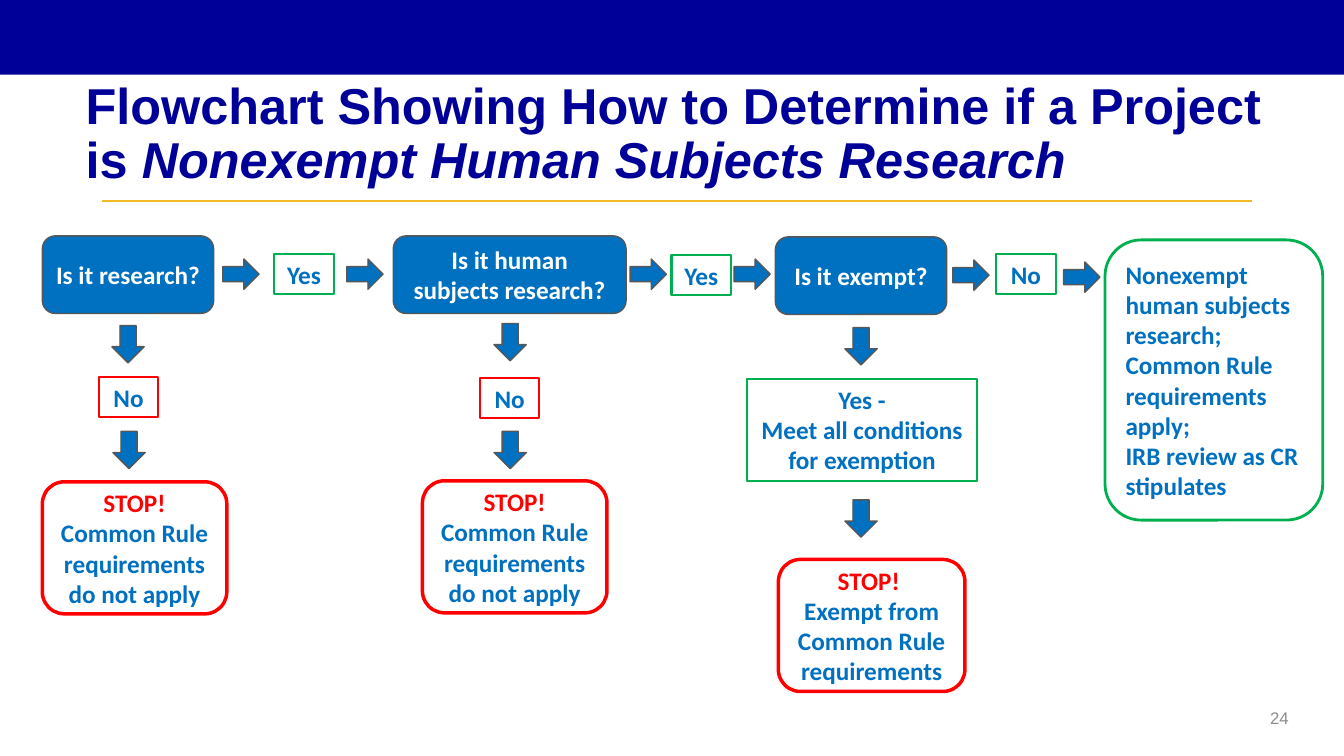
from pptx import Presentation
from pptx.dml.color import RGBColor
from pptx.enum.shapes import MSO_CONNECTOR, MSO_SHAPE as Kind
from pptx.enum.text import MSO_ANCHOR as Anchor, MSO_AUTO_SIZE as Fit, PP_ALIGN as Align
from pptx.oxml.ns import qn
from pptx.util import Inches, Pt
from lxml import etree

NAVY, BLUE, GREY, WHITE = "000099", "0070C0", "575757", "FFFFFF"
RED, GREEN, GOLD = "FF0000", "00B050", "F3B927"
CELL = Inches(0.1)  # the page is a grid of 133.3 columns by 75 rows


def color(value):
    return RGBColor.from_string(value)


def add_box(kind, place, fill, edge, width, paragraphs=(), align=Align.CENTER, anchor=Anchor.MIDDLE):
    """Draw one shape; each paragraph is a list of (text, colour) spans."""
    box = page.shapes.add_shape(kind, *(round(CELL * cells) for cells in place))
    box.shadow.inherit = False
    if fill:
        box.fill.solid()
        box.fill.fore_color.rgb = color(fill)
    else:
        box.fill.background()
    if edge:
        box.line.color.rgb = color(edge)
        box.line.width = Pt(width)
    else:
        box.line.fill.background()
    frame = box.text_frame
    frame.word_wrap = True
    frame.vertical_anchor = anchor
    for index, spans in enumerate(paragraphs):
        para = frame.add_paragraph() if index else frame.paragraphs[0]
        para.alignment = align
        for text, tint in spans:
            span = para.add_run()
            span.text = text
            for name, value in {"name": "Calibri", "size": Pt(18), "bold": True}.items():
                setattr(span.font, name, value)
            span.font.color.rgb = color(tint)
    return box


deck = Presentation()
deck.slide_width, deck.slide_height = Inches(13.33), Inches(7.5)
page = deck.slides.add_slide(deck.slide_layouts[5])

# Top band and gold rule
add_box(Kind.RECTANGLE, (0, 0, 133.3, 7.4), NAVY, None, 0)
rule = page.shapes.add_connector(
    MSO_CONNECTOR.STRAIGHT, *(round(CELL * cells) for cells in (10.1, 19.9, 124.2, 19.9)))
rule.line.color.rgb = color(GOLD)
rule.line.width = Pt(1.5)
etree.SubElement(rule._element.spPr, qn("a:effectLst"))

# Title
title = page.shapes.title
for name, cells in {"left": 7.5, "top": 9.9, "width": 123.7, "height": 9.4}.items():
    setattr(title, name, round(CELL * cells))
frame = title.text_frame
for name, value in {"word_wrap": True, "auto_size": Fit.NONE, "vertical_anchor": Anchor.BOTTOM}.items():
    setattr(frame, name, value)
para = frame.paragraphs[0]
para.alignment = Align.LEFT
para.line_spacing = 0.9
for text, italic in (("Flowchart Showing How to Determine if a Project is ", False),
                     ("Nonexempt Human Subjects Research", True)):
    span = para.add_run()
    span.text = text
    for name, value in {"name": "Arial", "size": Pt(36), "bold": True, "italic": italic}.items():
        setattr(span.font, name, value)
    span.font.color.rgb = color(NAVY)

# Page number
number = page.shapes.add_textbox(*(round(CELL * cells) for cells in (98.8, 69.7, 30, 4)))
number.text_frame.word_wrap = True
para = number.text_frame.paragraphs[0]
para.alignment = Align.RIGHT
span = para.add_run()
span.text = "24"
span.font.name, span.font.size = "Arial", Pt(12)
span.font.color.rgb = color("8C8C8C")

# Questions
for left, top, width, question in ((4.2, 23.4, 17, "Is it research?"),
                                   (39, 23.4, 23.1, "Is it human subjects research?"),
                                   (76.9, 23.5, 17, "Is it exempt?")):
    add_box(Kind.ROUNDED_RECTANGLE, (left, top, width, 7.7), BLUE, GREY, 1, [[(question, WHITE)]])

# Final outcome
outcome = ("Nonexempt human subjects research;", "Common Rule requirements apply;",
           "IRB review as CR stipulates")
add_box(Kind.ROUNDED_RECTANGLE, (109.6, 23.8, 21.6, 27.8), None, GREEN, 2,
        [[(line, BLUE)] for line in outcome], Align.LEFT)

# Answers
for left, top, answer, edge in ((9.8, 37.4, "No", RED), (47.6, 37.5, "No", RED),
                                (98.8, 25.2, "No", GREEN), (27.2, 25.2, "Yes", GREEN),
                                (66.6, 25.3, "Yes", GREEN)):
    add_box(Kind.RECTANGLE, (left, top, 5.9, 4), WHITE, edge, 1.5, [[(answer, BLUE)]], anchor=Anchor.TOP)
add_box(Kind.RECTANGLE, (74.1, 37.6, 22.8, 10.1), WHITE, GREEN, 1.5,
        [[("Yes -", BLUE)], [("Meet all conditions for exemption", BLUE)]], anchor=Anchor.TOP)

# Stops
not_apply = [[("STOP!", RED), (" Common Rule requirements do not apply", BLUE)]]
exempt = [[("STOP! ", RED)], [("Exempt from Common Rule requirements", BLUE)]]
for left, top, width, message in ((4.2, 47.8, 18.3, not_apply), (41.9, 47.7, 18.3, not_apply),
                                  (77.2, 55.5, 18.5, exempt)):
    add_box(Kind.ROUNDED_RECTANGLE, (left, top, width, 13.1), WHITE, RED, 2.5, message)

# Block arrows
for left, top in ((11.1, 32.3), (11.2, 42.8), (49, 32.1), (49, 42.8), (83.8, 32.5), (83.8, 49.6)):
    add_box(Kind.DOWN_ARROW, (left, top, 3.2, 3.7), BLUE, GREY, 1)
for left, top in ((22.1, 25.7), (34.4, 25.7), (62.5, 25.7), (72.8, 25.7), (94.5, 25.8), (105.5, 26)):
    add_box(Kind.RIGHT_ARROW, (left, top, 3.6, 3), BLUE, GREY, 1)

deck.save("out.pptx")
